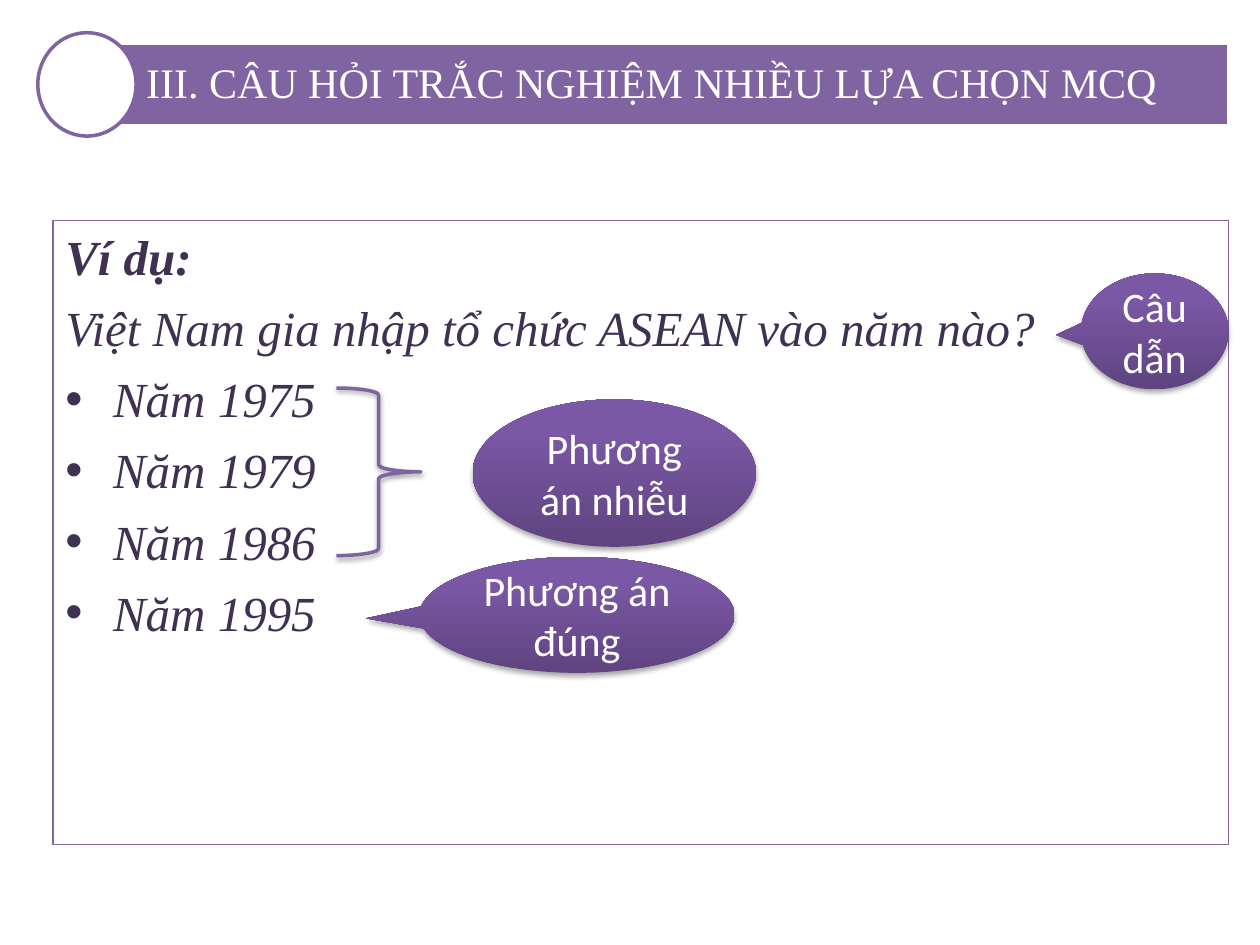
"""Build a slide that explains the parts of a multiple-choice question."""
import copy

import lxml.etree
import pptx
import pptx.dml.color
import pptx.enum.shapes
import pptx.enum.text
import pptx.oxml.ns
import pptx.util

Inches, Pt = pptx.util.Inches, pptx.util.Pt
SHAPE = pptx.enum.shapes.MSO_SHAPE
ALIGN = pptx.enum.text.PP_ALIGN
ANCHOR = pptx.enum.text.MSO_ANCHOR
qn = pptx.oxml.ns.qn

COLORS = {"purple": "8064A2", "ink": "403152", "white": "FFFFFF", "shadow": "000000"}
GRADIENT = [(0, "5F4480"), (0.8, "7B58A6"), (1, "7C57A8")]
SERIF, SANS = "Times New Roman", "Calibri"

TITLE = "III. CÂU HỎI TRẮC NGHIỆM NHIỀU LỰA CHỌN MCQ"
EXAMPLE = "Ví dụ:"
QUESTION = "Việt Nam gia nhập tổ chức ASEAN vào năm nào?"
ANSWERS = ["Năm 1975", "Năm 1979", "Năm 1986", "Năm 1995"]
LABELS = [
    ("Câu dẫn", SHAPE.OVAL_CALLOUT, (8.58, 2.17, 1.17, 0.92)),
    ("Phương án nhiễu", SHAPE.OVAL, (3.75, 3.17, 2.25, 1.17)),
    ("Phương án đúng", SHAPE.OVAL_CALLOUT, (3.33, 4.42, 2.5, 0.92)),
]
POINTER = (-0.67, 0.03)


def rgb(value):
    return pptx.dml.color.RGBColor.from_string(value)


def add_box(slide, kind, place, fill=None, line=None, width=2):
    box = slide.shapes.add_shape(kind, *map(Inches, place))
    box.shadow.inherit = False
    if fill:
        box.fill.solid()
        box.fill.fore_color.rgb = rgb(fill)
    else:
        box.fill.background()
    if line:
        box.line.color.rgb = rgb(line)
        box.line.width = Pt(width)
    else:
        box.line.fill.background()
    return box


def add_text(para, text, size=24, font=SANS, color=COLORS["white"], bold=False,
             italic=False, align=ALIGN.LEFT, before=0, spacing=None, bullet=None):
    para.alignment = align
    para.space_before = Pt(before)
    para.line_spacing = spacing
    if bullet:
        props = para._p.get_or_add_pPr()
        props.set("marL", str(Inches(0.38)))
        props.set("indent", str(-Inches(0.38)))
        lxml.etree.SubElement(props, qn("a:buFont"), typeface="Arial")
        lxml.etree.SubElement(props, qn("a:buChar"), char=bullet)
    span = para.add_run()
    span.text = text
    span.font.size, span.font.name = Pt(size), font
    span.font.bold, span.font.italic = bold, italic
    span.font.color.rgb = rgb(color)


def add_shadow(box, opacity, distance):
    effects = box._element.spPr.find(qn("a:effectLst"))
    shadow = lxml.etree.SubElement(
        effects, qn("a:outerShdw"), blurRad=str(Pt(3.1)), dist=str(Pt(distance)),
        dir="5400000", rotWithShape="0")
    color = lxml.etree.SubElement(shadow, qn("a:srgbClr"), val=COLORS["shadow"])
    lxml.etree.SubElement(color, qn("a:alpha"), val=str(opacity * 1000))


def fill_gradient(box):
    box.fill.gradient()
    box.fill.gradient_angle = 90
    stop_list = box._element.spPr.find(qn("a:gradFill")).find(qn("a:gsLst"))
    stop_list.append(copy.deepcopy(stop_list[-1]))
    for stop, (position, color) in zip(box.fill.gradient_stops, GRADIENT):
        stop.position = position
        stop.color.rgb = rgb(color)


def add_example(slide):
    box = add_box(slide, SHAPE.RECTANGLE, (0.42, 1.75, 9.33, 4.95),
                  line=COLORS["purple"], width=0.75)
    frame = box.text_frame
    frame.word_wrap = True
    frame.vertical_anchor = ANCHOR.TOP
    lines = [(EXAMPLE, True, None), (QUESTION, False, None)]
    lines += [(answer, False, "•") for answer in ANSWERS]
    for index, (text, bold, bullet) in enumerate(lines):
        para = frame.add_paragraph() if index else frame.paragraphs[0]
        add_text(para, text, size=28, font=SERIF, color=COLORS["ink"], bold=bold,
                 italic=True, before=7, bullet=bullet)


def add_header(slide):
    bar = add_box(slide, SHAPE.RECTANGLE, (0.7, 0.34, 9.05, 0.66),
                  fill=COLORS["purple"], line=COLORS["white"])
    frame = bar.text_frame
    frame.word_wrap = True
    frame.vertical_anchor = ANCHOR.MIDDLE
    frame.margin_left = Inches(0.46)
    frame.margin_top = frame.margin_right = frame.margin_bottom = Inches(0.06)
    add_text(frame.paragraphs[0], TITLE, font=SERIF, spacing=0.9)
    add_box(slide, SHAPE.OVAL, (0.3, 0.26, 0.78, 0.82),
            fill=COLORS["white"], line=COLORS["purple"])


def add_label(slide, text, kind, place):
    label = add_box(slide, kind, place)
    fill_gradient(label)
    add_shadow(label, 35, 1.8)
    if kind == SHAPE.OVAL_CALLOUT:
        label.adjustments[0], label.adjustments[1] = POINTER
    label.text_frame.word_wrap = True
    label.text_frame.vertical_anchor = ANCHOR.MIDDLE
    add_text(label.text_frame.paragraphs[0], text, align=ALIGN.CENTER)


def main():
    deck = pptx.Presentation()
    deck.slide_width, deck.slide_height = Inches(10), Inches(7.5)
    slide = deck.slides.add_slide(deck.slide_layouts[6])
    add_example(slide)
    add_header(slide)
    brace = add_box(slide, SHAPE.RIGHT_BRACE, (2.67, 3.08, 0.67, 1.33),
                    line=COLORS["purple"])
    add_shadow(brace, 38, 1.6)
    for text, kind, place in LABELS:
        add_label(slide, text, kind, place)
    deck.save("out.pptx")


if __name__ == "__main__":
    main()
